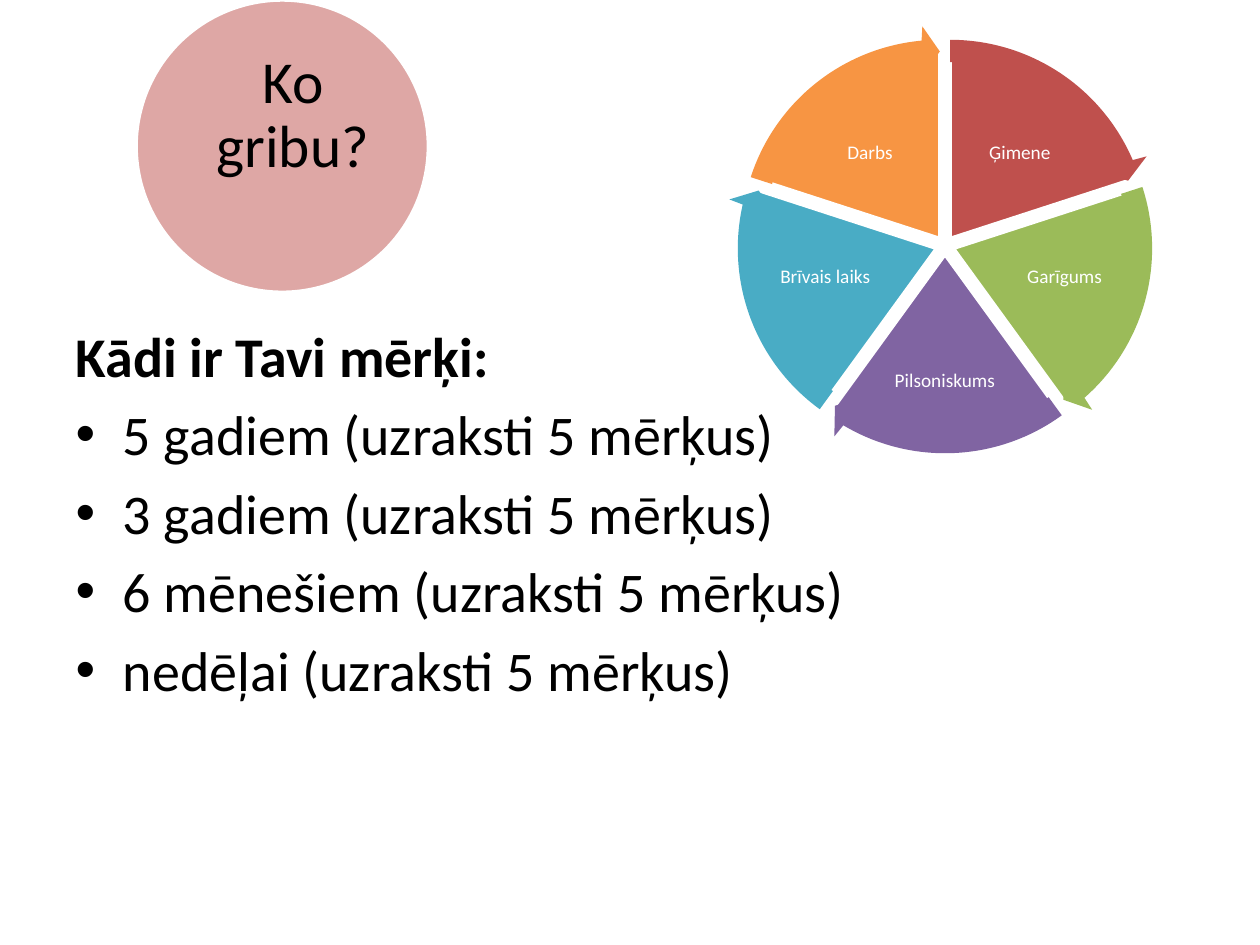
from dataclasses import dataclass
from math import cos, radians, sin, tan

from lxml import etree
from pptx import Presentation
from pptx import util as u
from pptx.dml.color import RGBColor
from pptx.enum import shapes as sh, text as tx
from pptx.oxml.ns import qn

CELL = 0.25  # inches; the slide is a grid of 40 columns by 30 rows
COLS, ROWS = 40, 30


@dataclass(frozen=True)
class Theme:
    font: str = "Calibri"
    ink: str = "000000"
    paper: str = "FFFFFF"
    rose: str = "BF504D"
    green: str = "9BBB59"
    violet: str = "8064A2"
    teal: str = "49ACC5"
    orange: str = "F79543"
    title: float = 34
    body: float = 32
    label: float = 11
    edge: float = 2


@dataclass(frozen=True)
class Box:
    col: float
    row: float
    wide: float
    high: float

    def emu(self) -> list[int]:
        return [grid(n) for n in (self.col, self.row, self.wide, self.high)]


@dataclass(frozen=True)
class Wedge:
    """A slice of the wheel; its label is placed from the wheel's centre."""
    name: str
    color: str
    dx: float
    dy: float
    wide: float
    high: float


T = Theme()
HUB = (30, 7.8)
SHIFT = 0.28  # how far each slice moves out of the hub
PIE = 6.02  # slice radius
OUTER, INNER = 6.31, 5.6  # arrow band
BARB_OUT, BARB_IN, TIP = 6.76, 5.18, 5.94  # arrow head
SWEEP, BEND = 72, 66.75  # degrees of a slice and of its arrow's band
WEDGES = [
    Wedge("Ģimene", T.rose, 2.38, -2.94, 3.88, 2.6),
    Wedge("Garīgums", T.green, 3.8, 1, 3.6, 2.88),
    Wedge("Pilsoniskums", T.violet, 0, 4.3, 3.44, 3.16),
    Wedge("Brīvais laiks", T.teal, -3.8, 1, 3.6, 2.88),
    Wedge("Darbs", T.orange, -2.38, -2.94, 3.88, 2.6),
]
GOALS = [
    "5 gadiem (uzraksti 5 mērķus)",
    "3 gadiem (uzraksti 5 mērķus)",
    "6 mēnešiem (uzraksti 5 mērķus)",
    "nedēļai (uzraksti 5 mērķus)",
]


def grid(n: float) -> int:
    return u.Inches(n * CELL)


def polar(mid: tuple, r: float, deg: float) -> tuple[float, float]:
    return mid[0] + r * cos(radians(deg)), mid[1] + r * sin(radians(deg))


def around(mid: tuple, r: float) -> Box:
    return Box(mid[0] - r, mid[1] - r, 2 * r, 2 * r)


def place(shape, box: Box) -> None:
    shape.left, shape.top, shape.width, shape.height = box.emu()


def paint(shape, color: str, edge: str | None = None) -> None:
    shape.shadow.inherit = False
    shape.fill.solid()
    shape.fill.fore_color.rgb = RGBColor.from_string(color)
    if edge:
        shape.line.color.rgb = RGBColor.from_string(edge)
        shape.line.width = u.Pt(T.edge)
    else:
        shape.line.fill.background()


def frame(shape, pad: tuple[float, float], anchor) -> None:
    f = shape.text_frame
    f.word_wrap, f.auto_size = True, tx.MSO_AUTO_SIZE.NONE
    f.vertical_anchor = anchor
    f.margin_left = f.margin_right = u.Inches(pad[0])
    f.margin_top = f.margin_bottom = u.Inches(pad[1])


def write(para, words: str, *, size: float, color: str = T.ink,
          bold: bool = False, align=None, lead: float | None = None,
          before: float = 0) -> None:
    run = para.add_run()
    run.text = words
    run.font.name, run.font.size, run.font.bold = T.font, u.Pt(size), bold
    run.font.color.rgb = RGBColor.from_string(color)
    para.alignment, para.line_spacing = align, lead
    para.space_before = u.Pt(before)


def indent(para, bullet: str | None) -> None:
    props = para._p.get_or_add_pPr()
    props.set("marL", str(u.Pt(27)))
    props.set("indent", str(-u.Pt(27)))
    if bullet:
        etree.SubElement(props, qn("a:buChar")).set("char", bullet)
    else:
        etree.SubElement(props, qn("a:buNone"))


def draw_goals(body) -> None:
    place(body, Box(2, 10, 36, 17))
    frame(body, (0.1, 0.05), tx.MSO_ANCHOR.TOP)
    head = body.text_frame.paragraphs[0]
    write(head, "Kādi ir Tavi mērķi:", size=T.body, bold=True)
    indent(head, None)
    for goal in GOALS:
        para = body.text_frame.add_paragraph()
        write(para, goal, size=T.body, before=6.4)
        indent(para, "•")


def draw_title(slide) -> None:
    disc = slide.shapes.add_shape(sh.MSO_SHAPE.OVAL,
                                  *Box(4.32, 0, 9.28, 9.28).emu())
    paint(disc, T.rose, T.paper)
    tint = disc.fill._xPr.find(qn("a:solidFill"))[0]
    etree.SubElement(tint, qn("a:alpha")).set("val", "50000")
    title = slide.shapes.title
    place(title, Box(5.9, 1.62, 6.8, 4.16))
    frame(title, (0, 0), tx.MSO_ANCHOR.MIDDLE)
    write(title.text_frame.paragraphs[0], "Ko gribu?", size=T.title,
          align=tx.PP_ALIGN.CENTER, lead=0.9)
    disc._element.addnext(title._element)  # text in front of the disc


def draw_wedge(parts, wedge: Wedge, mid: tuple, start: float) -> None:
    pie = parts.add_shape(sh.MSO_SHAPE.PIE, *around(mid, PIE).emu())
    for i, deg in enumerate((start, start + SWEEP)):
        pie.adjustments[i] = deg % 360 * 0.6  # 60000ths of a degree
    paint(pie, wedge.color, T.paper)
    label = parts.add_textbox(*Box(
        HUB[0] + wedge.dx - wedge.wide / 2, HUB[1] + wedge.dy - wedge.high / 2,
        wedge.wide, wedge.high).emu())
    frame(label, (0.02, 0.02), tx.MSO_ANCHOR.MIDDLE)
    write(label.text_frame.paragraphs[0], wedge.name, size=T.label,
          color=T.paper, align=tx.PP_ALIGN.CENTER, lead=0.9)


def bend(r: float, a: float, b: float) -> list[tuple[float, float]]:
    """Two control points and the end of an arc from angle a to angle b."""
    pull = r * 4 / 3 * tan(radians(b - a) / 4)
    mid = (BARB_OUT, BARB_OUT)
    return [polar(polar(mid, r, a), pull, a + 90),
            polar(polar(mid, r, b), -pull, b + 90), polar(mid, r, b)]


def draw_arrow(parts, color: str, mid: tuple, start: float) -> None:
    box, hub, end = around(mid, BARB_OUT), (BARB_OUT, BARB_OUT), start + BEND
    head = [polar(hub, r, deg) for r, deg in (
        (BARB_OUT, start + 67.3), (TIP, start + SWEEP),
        (BARB_IN, start + 65.8), (INNER, end))]
    steps = [("moveTo", [polar(hub, OUTER, start)]),
             ("cubicBezTo", bend(OUTER, start, end)),
             *[("lnTo", [dot]) for dot in head],
             ("cubicBezTo", bend(INNER, end, start)), ("close", [])]
    pen = parts.build_freeform()
    pen.add_line_segments([(grid(1), grid(1))])
    arrow = pen.convert_to_shape()
    place(arrow, box)
    # Curved outline, measured from the corner of the arrow's box
    line = next(arrow._element.iter(qn("a:path")))
    for old in list(line):
        line.remove(old)
    line.set("w", str(arrow.width))
    line.set("h", str(arrow.height))
    for tag, dots in steps:
        step = etree.SubElement(line, qn(f"a:{tag}"))
        for x, y in dots:
            dot = etree.SubElement(step, qn("a:pt"))
            dot.set("x", str(grid(x)))
            dot.set("y", str(grid(y)))
    paint(arrow, color)


def draw_wheel(slide) -> None:
    parts = slide.shapes.add_group_shape().shapes
    turns = [270 + SWEEP * i for i in range(len(WEDGES))]
    mids = [polar(HUB, SHIFT, deg + SWEEP / 2) for deg in turns]
    for wedge, mid, deg in zip(WEDGES, mids, turns):
        draw_wedge(parts, wedge, mid, deg)
    for wedge, mid, deg in zip(WEDGES, mids, turns):
        draw_arrow(parts, wedge.color, mid, deg)


def main() -> None:
    deck = Presentation()
    deck.slide_width, deck.slide_height = grid(COLS), grid(ROWS)
    slide = deck.slides.add_slide(deck.slide_layouts[1])
    # Goals list, title on its disc, wheel of life areas
    draw_goals(slide.placeholders[1])
    draw_title(slide)
    draw_wheel(slide)
    deck.save("out.pptx")


if __name__ == "__main__":
    main()
